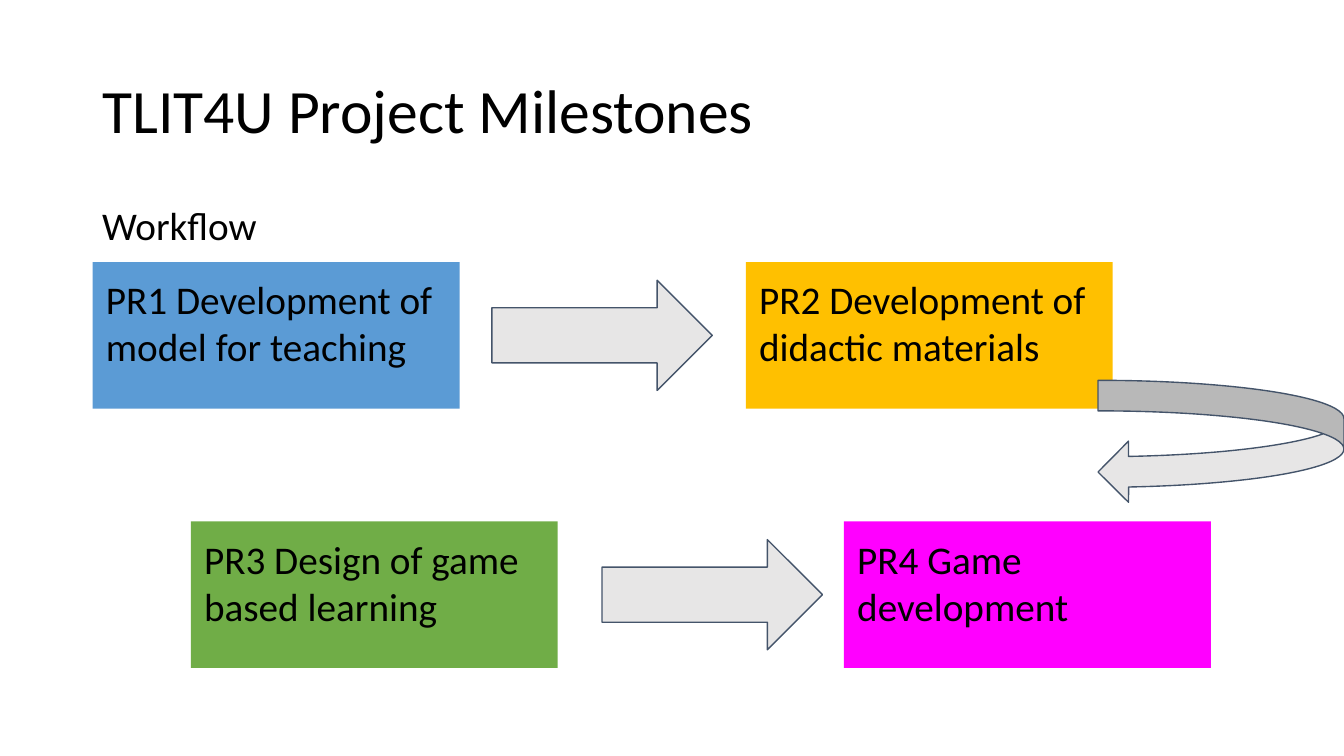
from pptx import Presentation
from pptx.dml.color import RGBColor
from pptx.enum.shapes import MSO_SHAPE
from pptx.enum.text import MSO_ANCHOR, PP_ALIGN
from pptx.util import Inches, Pt

COLORS = {
    "text": "000000",
    "blue": "5B9BD5",
    "amber": "FFC000",
    "green": "70AD47",
    "magenta": "FF00FF",
    "arrow": "E7E6E6",
    "outline": "44546A",
}
FONT = "Calibri"

HEADINGS = [
    ("TLIT4U Project Milestones", 0.3, 1.09, 33, MSO_ANCHOR.MIDDLE),
    ("Workflow", 1.5, 3.57, 21, MSO_ANCHOR.TOP),
]
ROWS = [
    (0.69, 1.95, 3.66, [
        ("PR1 Development of model for teaching", "blue"),
        ("PR2 Development of didactic materials", "amber"),
    ]),
    (1.42, 3.88, 4.48, [
        ("PR3 Design of game based learning", "green"),
        ("PR4 Game development", "magenta"),
    ]),
]
BOX_W, BOX_H, BOX_STEP = 2.73, 1.09, 4.86
ARROW_W, ARROW_H = 1.64, 0.82
RETURN_ARROW = (8.17, 2.83, 1.83, 0.91)


def color(name):
    return RGBColor.from_string(COLORS[name])


def write(sp, text, size, inset_x, inset_y, anchor, spacing=None):
    tf = sp.text_frame
    tf.word_wrap = True
    tf.vertical_anchor = anchor
    tf.margin_left = tf.margin_right = Inches(inset_x)
    tf.margin_top = tf.margin_bottom = Inches(inset_y)
    tf.text = text
    p = tf.paragraphs[0]
    p.alignment = PP_ALIGN.LEFT
    p.line_spacing = spacing
    font = p.runs[0].font
    font.name, font.size = FONT, Pt(size)
    font.color.rgb = color("text")


def add_shape(s, kind, bounds, fill, outline=None):
    sp = s.shapes.add_shape(kind, *map(Inches, bounds))
    sp.shadow.inherit = False
    sp.fill.solid()
    sp.fill.fore_color.rgb = color(fill)
    if outline:
        sp.line.color.rgb = color(outline)
        sp.line.width = Pt(0.75)
    else:
        sp.line.fill.background()
    return sp


prs = Presentation()
prs.slide_width = Inches(10)
prs.slide_height = prs.slide_width * 9 // 16
s = prs.slides.add_slide(prs.slide_layouts[6])

for text, top, height, size, anchor in HEADINGS:
    sp = s.shapes.add_textbox(*map(Inches, (0.69, top, 8.62, height)))
    write(sp, text, size, 0.07, 0.04, anchor, 0.9)

for left, top, arrow_left, boxes in ROWS:
    for i, (text, fill) in enumerate(boxes):
        bounds = (left + i * BOX_STEP, top, BOX_W, BOX_H)
        sp = add_shape(s, MSO_SHAPE.RECTANGLE, bounds, fill)
        write(sp, text, 21, 0.1, 0.1, MSO_ANCHOR.TOP)
    arrow_top = top + (BOX_H - ARROW_H) / 2
    add_shape(s, MSO_SHAPE.RIGHT_ARROW,
              (arrow_left, arrow_top, ARROW_W, ARROW_H), "arrow", "outline")

add_shape(s, MSO_SHAPE.CURVED_LEFT_ARROW, RETURN_ARROW, "arrow", "outline")

prs.save("out.pptx")
